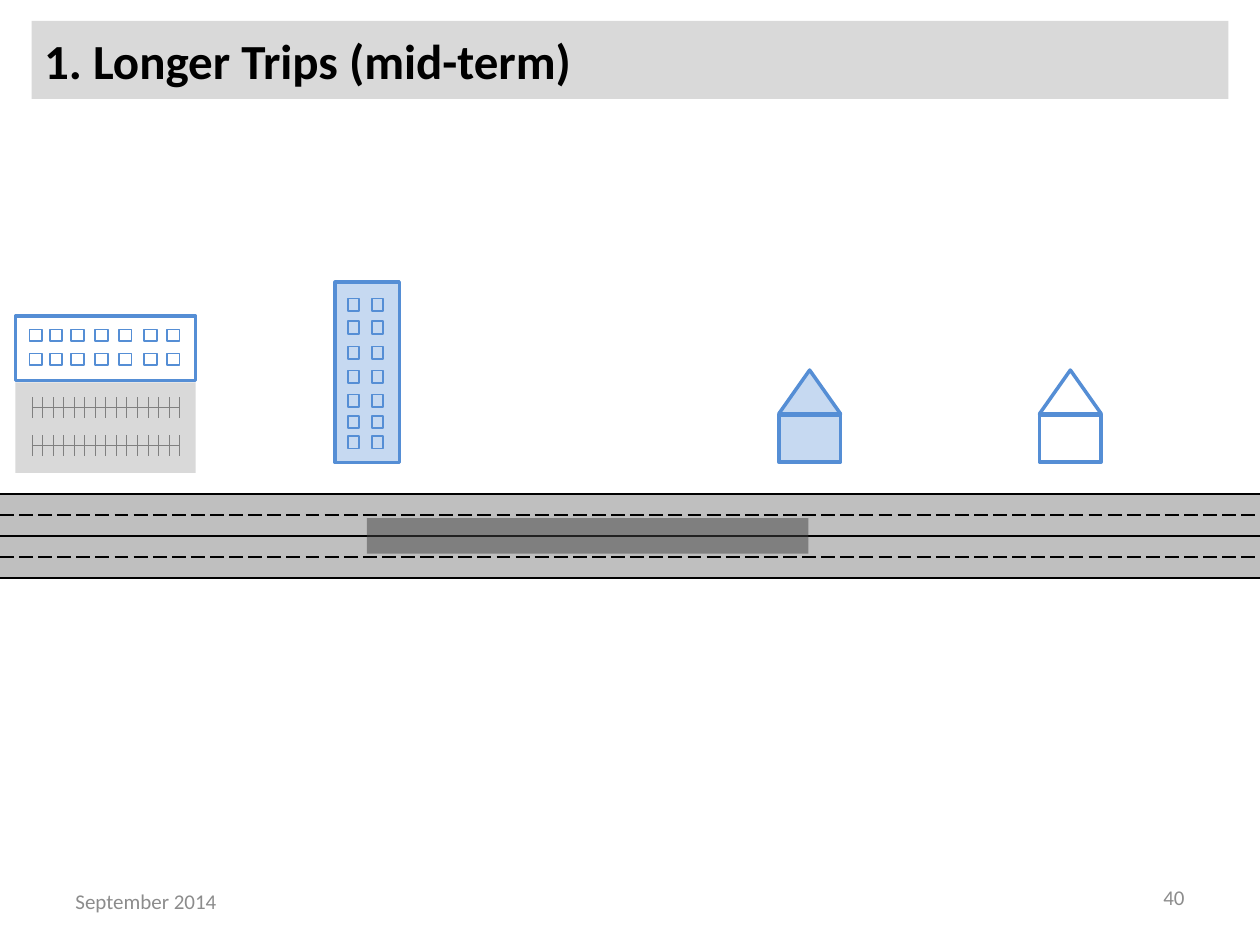
import dataclasses
import typing

import pptx
import pptx.dml.color
import pptx.enum.dml
import pptx.enum.shapes
import pptx.enum.text
import pptx.oxml.ns
import pptx.util
from lxml import etree

Pt = pptx.util.Pt
RGBColor = pptx.dml.color.RGBColor
Shape = pptx.enum.shapes.MSO_SHAPE
Align = pptx.enum.text.PP_ALIGN

BLACK = RGBColor(0x00, 0x00, 0x00)
FOOTER_GRAY = RGBColor(0x8C, 0x8C, 0x8C)
PANEL_GRAY = RGBColor(0xD9, 0xD9, 0xD9)
ROAD_GRAY = RGBColor(0xBF, 0xBF, 0xBF)
PARKING_GRAY = RGBColor(0x80, 0x80, 0x80)
TRIP_GRAY = RGBColor(0x40, 0x40, 0x40)
LIGHT_BLUE = RGBColor(0xC6, 0xD9, 0xF1)
BLUE = RGBColor(0x55, 0x8E, 0xD5)

FONT = "Calibri"
PAGE_WIDTH = 720
ROAD_TOP = 282.2
LANE_HEIGHT = 12
STALL_COUNT = 15


@dataclasses.dataclass(frozen=True)
class Area:
    left: float
    top: float
    width: float
    height: float

    def lengths(self) -> tuple:
        return Pt(self.left), Pt(self.top), Pt(self.width), Pt(self.height)


@dataclasses.dataclass(frozen=True)
class Building:
    area: Area
    fill: typing.Optional[RGBColor]
    columns: tuple
    rows: tuple
    window_width: float
    window_height: float


@dataclasses.dataclass(frozen=True)
class House:
    left: float
    fill: typing.Optional[RGBColor]


@dataclasses.dataclass(frozen=True)
class Footer:
    text: str
    area: Area
    align: Align


TOWER = Building(
    Area(191.5, 161.3, 36.7, 103), LIGHT_BLUE,
    (198.7, 212.4), (170.6, 183.6, 198, 211.7, 225.4, 237.6, 249.1), 6.5, 7.2,
)
OFFICE = Building(
    Area(8.8, 180.7, 103, 36.7), None,
    (16.9, 28.4, 40.7, 54.4, 68, 82.4, 95.4), (188.3, 202), 7.2, 6.5,
)
HOUSES = (House(445, LIGHT_BLUE), House(594, None))
FOOTERS = (
    Footer("40", Area(516, 498.5, 168, 28.8), Align.RIGHT),
    Footer("September 2014", Area(36, 500.5, 168, 28.8), Align.LEFT),
)


def draw_shape(shapes, kind: Shape, area: Area, fill: typing.Optional[RGBColor],
               line: typing.Optional[RGBColor] = None, weight: float = 1) -> None:
    shape = shapes.add_shape(kind, *area.lengths())
    shape.shadow.inherit = False
    if fill is None:
        shape.fill.background()
    else:
        shape.fill.solid()
        shape.fill.fore_color.rgb = fill
    if line is None:
        shape.line.fill.background()
    else:
        shape.line.color.rgb = line
        shape.line.width = Pt(weight)


def draw_line(shapes, start: tuple, end: tuple, color: RGBColor, weight: float):
    line = shapes.add_connector(
        pptx.enum.shapes.MSO_CONNECTOR.STRAIGHT,
        Pt(start[0]), Pt(start[1]), Pt(end[0]), Pt(end[1]),
    )
    line.line.color.rgb = color
    line.line.width = Pt(weight)
    etree.SubElement(line._element.spPr, pptx.oxml.ns.qn("a:effectLst"))
    return line


def draw_building(page, building: Building) -> None:
    shapes = page.shapes.add_group_shape().shapes
    draw_shape(shapes, Shape.RECTANGLE, building.area, building.fill, BLUE, 2)
    for top in building.rows:
        for left in building.columns:
            window = Area(left, top, building.window_width, building.window_height)
            draw_shape(shapes, Shape.RECTANGLE, window, building.fill, BLUE)


def draw_house(page, house: House) -> None:
    shapes = page.shapes.add_group_shape().shapes
    walls = Area(house.left, 237.3, 35.3, 26.8)
    roof = Area(house.left, 211.5, 35.3, 25)
    draw_shape(shapes, Shape.RECTANGLE, walls, house.fill, BLUE, 2)
    draw_shape(shapes, Shape.ISOSCELES_TRIANGLE, roof, house.fill, BLUE, 2)


def draw_parking(page) -> None:
    shapes = page.shapes.add_group_shape().shapes
    left, right, half_height = 18.2, 102.5, 6
    pitch = (right - left) / (STALL_COUNT - 1)
    for middle in (233, 254.6):
        draw_line(shapes, (left, middle), (right, middle), PARKING_GRAY, 0.25)
        for stall in range(STALL_COUNT):
            x = left + stall * pitch
            draw_line(shapes, (x, middle - half_height), (x, middle + half_height),
                      PARKING_GRAY, 0.25)


def draw_road(page) -> None:
    road = Area(0, ROAD_TOP, PAGE_WIDTH, 4 * LANE_HEIGHT)
    draw_shape(page.shapes, Shape.RECTANGLE, road, ROAD_GRAY)
    for index in range(5):
        y = ROAD_TOP + index * LANE_HEIGHT
        line = draw_line(page.shapes, (0, y), (PAGE_WIDTH, y), BLACK, 1)
        if index % 2:
            line.line.dash_style = pptx.enum.dml.MSO_LINE.LONG_DASH


def draw_trip(page) -> None:
    middle = ROAD_TOP + 2 * LANE_HEIGHT
    trip = draw_line(page.shapes, (209.6, middle), (462, middle), TRIP_GRAY, 20.25)
    color = trip.line._ln.find(".//" + pptx.oxml.ns.qn("a:srgbClr"))
    etree.SubElement(color, pptx.oxml.ns.qn("a:alpha"), val="50000")


def write_text(box, text: str, size: float, color: RGBColor, align: Align,
               bold: bool = False) -> None:
    frame = box.text_frame
    frame.text = text
    frame.word_wrap = True
    frame.auto_size = pptx.enum.text.MSO_AUTO_SIZE.NONE
    frame.vertical_anchor = pptx.enum.text.MSO_ANCHOR.MIDDLE
    para = frame.paragraphs[0]
    para.alignment = align
    font = para.runs[0].font
    font.name = FONT
    font.size = Pt(size)
    font.bold = bold
    font.color.rgb = color


def draw_title(page) -> None:
    title = page.shapes.title
    title.left, title.top, title.width, title.height = Area(18, 12, 684, 44.5).lengths()
    title.fill.solid()
    title.fill.fore_color.rgb = PANEL_GRAY
    write_text(title, "1. Longer Trips (mid-term)", 28, BLACK, Align.LEFT, True)


def main() -> None:
    deck = pptx.Presentation()
    deck.slide_width, deck.slide_height = Pt(PAGE_WIDTH), Pt(540)
    page = deck.slides.add_slide(deck.slide_layouts.get_by_name("Title Only"))
    draw_title(page)
    draw_shape(page.shapes, Shape.RECTANGLE, Area(8.8, 218.5, 103, 51.8), PANEL_GRAY)
    draw_road(page)
    draw_trip(page)
    for building in (TOWER, OFFICE):
        draw_building(page, building)
    draw_parking(page)
    for house in HOUSES:
        draw_house(page, house)
    for footer in FOOTERS:
        box = page.shapes.add_textbox(*footer.area.lengths())
        write_text(box, footer.text, 12, FOOTER_GRAY, footer.align)
    deck.save("out.pptx")


if __name__ == "__main__":
    main()
